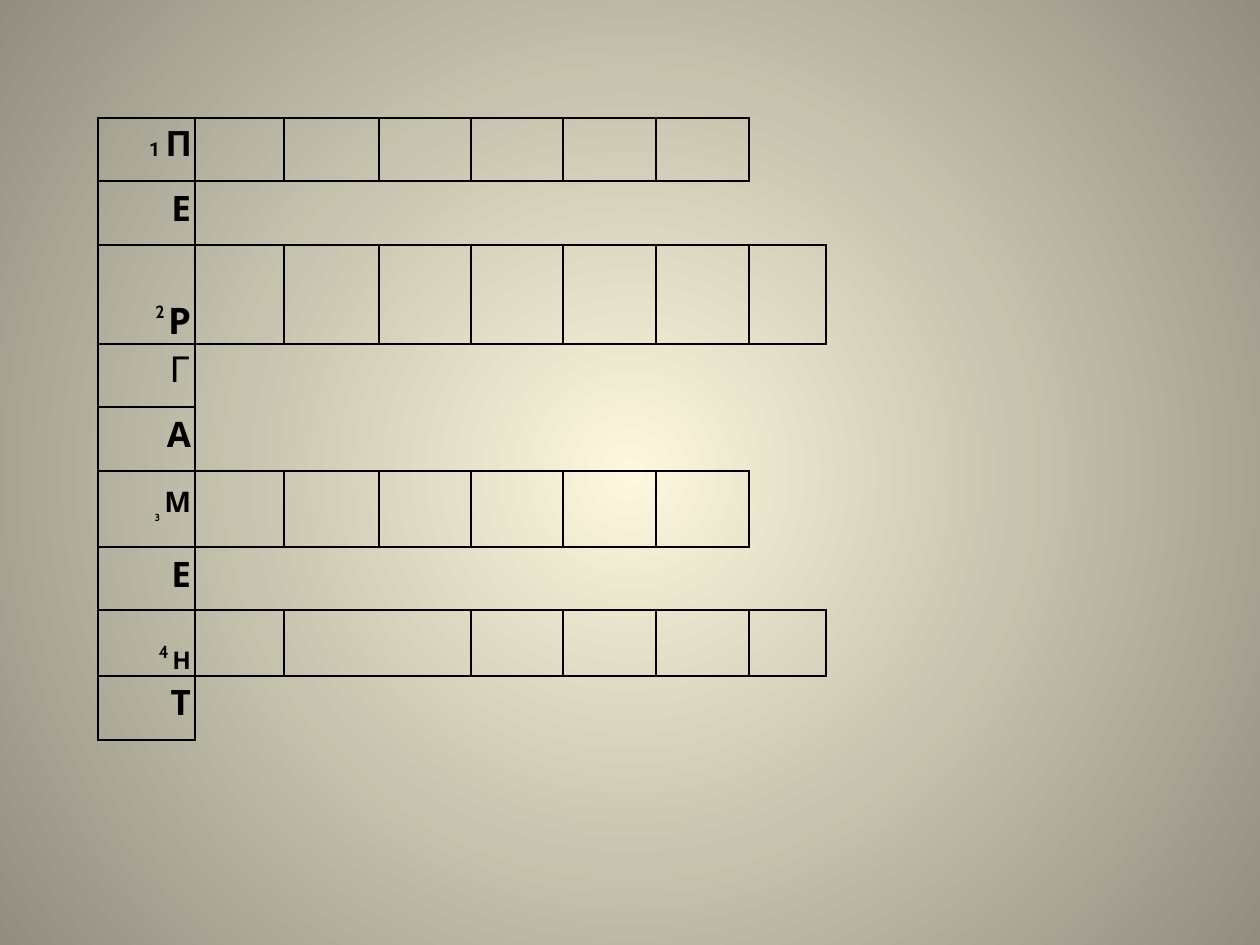
from lxml.etree import SubElement
from pptx import Presentation
from pptx.dml.color import RGBColor
from pptx.enum.text import PP_ALIGN as Align
from pptx.oxml.ns import qn
from pptx.util import Pt

SCALE = 914400 // 126
COLORS = {"ink": "000000", "glow": "FCF7DD", "edge": "918E81"}
LEFT, TOP = 98, 118
COLUMNS = [97, 89, 95, 92, 92, 93, 93, 77]
ROWS = [63, 64, 99, 63, 64, 76, 63, 66, 64]
ANSWER_LENGTHS = [6, 0, 7, 0, 0, 6, 0, 7, 0]
MERGED_WIDTHS = {1: 6, 3: 7, 4: 6, 6: 6, 8: 7}
OPEN_EDGE = {(7, 2), (7, 3)}
SIDES = {"lnL": (0, -1), "lnR": (0, 1), "lnT": (-1, 0), "lnB": (1, 0)}
# fmt: each key letter lists (text, size, baseline percent) spans
KEYWORD = [
    ("Roboto", True, 3.5, [("1", 11, 0), ("П", 20, 0)]),
    ("Cabin", True, 2, [("Е", 20, 0)]),
    ("Cabin", True, 2, [("2", 10, 0), ("Р", 36, -25)]),
    ("DejaVu Sans", False, 0, [("Г", 20, 0)]),
    ("Cabin", True, 2.5, [("А", 20, 0)]),
    ("Cabin", True, 2.5, [("3", 10, 30), ("М", 28, 30)]),
    ("Cabin", True, 2, [("Е", 20, 0)]),
    ("Cabin", True, 2, [("4", 10, 0), ("Н", 24, -25)]),
    ("Cabin", True, 2, [("Т", 20, 0)]),
]


def px(length):
    """Turn whole pixels into EMU."""
    return length * SCALE


def color(name):
    """Look up a named colour."""
    return RGBColor.from_string(COLORS[name])


def paint_background(page):
    """Fill the page with a glow spreading from its centre."""
    fill = page.background.fill
    fill.gradient()
    for stop, name in zip(fill.gradient_stops, ("glow", "edge")):
        stop.color.rgb = color(name)
    linear = page.element.find(".//" + qn("a:lin"))
    gradient = linear.getparent()
    gradient.remove(linear)
    circle = SubElement(gradient, qn("a:path"), path="circle")
    SubElement(circle, qn("a:fillToRect"), l="50000", t="50000", r="50000", b="50000")


def is_box(row, column):
    """Tell whether a grid position holds a letter box."""
    return 0 <= row < len(ROWS) and 0 <= column <= ANSWER_LENGTHS[row]


def draw_borders(cell, row, column):
    """Rule every side that touches a letter box and clear the rest."""
    properties = cell._tc.get_or_add_tcPr()
    for side, (down, across) in SIDES.items():
        neighbour = (row + down, column + across)
        line = SubElement(properties, qn("a:" + side), w=str(Pt(1)))
        is_open = {(row, column), neighbour} == OPEN_EDGE
        if not is_open and (is_box(row, column) or is_box(*neighbour)):
            solid = SubElement(line, qn("a:solidFill"))
            SubElement(solid, qn("a:srgbClr"), val=COLORS["ink"])
        else:
            SubElement(line, qn("a:noFill"))


def write_letter(cell, font, bold, spacing, spans):
    """Write a clue number and key letter into a cell."""
    cell.margin_left = cell.margin_right = px(4)
    cell.margin_top = cell.margin_bottom = 0
    para = cell.text_frame.paragraphs[0]
    para.alignment = Align.RIGHT
    para.line_spacing = 1.15
    for text, size, baseline in spans:
        span = para.add_run()
        span.text = text
        span.font.name = font
        span.font.size = Pt(size)
        span.font.bold = bold
        span.font.color.rgb = color("ink")
        properties = span._r.get_or_add_rPr()
        properties.set("spc", str(int(spacing * 100)))
        properties.set("baseline", str(baseline * 1000))


def add_crossword(page):
    """Build the crossword as one table."""
    frame = page.shapes.add_table(len(ROWS), len(COLUMNS), px(LEFT), px(TOP),
                                  px(sum(COLUMNS)), px(sum(ROWS)))
    table = frame.table
    table.first_row = table.horz_banding = False
    for column, width in zip(table.columns, COLUMNS):
        column.width = px(width)
    for row, height in zip(table.rows, ROWS):
        row.height = px(height)
    for row in range(len(ROWS)):
        for column in range(len(COLUMNS)):
            cell = table.cell(row, column)
            draw_borders(cell, row, column)
            cell.fill.background()
        write_letter(table.cell(row, 0), *KEYWORD[row])
    for row, width in MERGED_WIDTHS.items():
        table.cell(row, 1).merge(table.cell(row, width))


def main():
    """Create the deck with its crossword page."""
    deck = Presentation()
    deck.slide_width, deck.slide_height = px(1260), px(945)
    page = deck.slides.add_slide(deck.slide_layouts[6])
    paint_background(page)
    add_crossword(page)
    deck.save("out.pptx")


if __name__ == "__main__":
    main()
